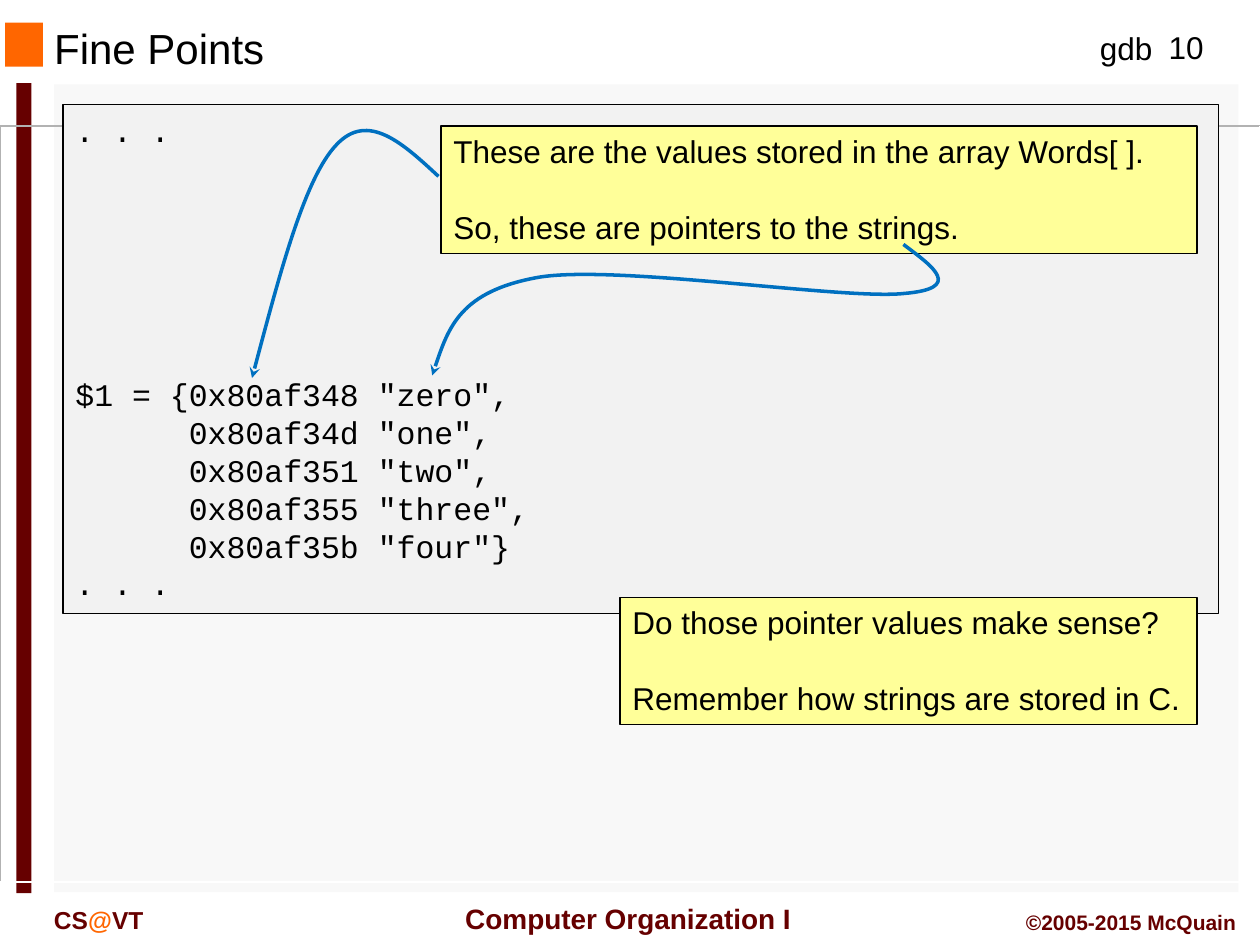
import pptx
import pptx.dml.color
import pptx.enum.text
import pptx.oxml
import pptx.oxml.ns
import pptx.util
from pptx.util import Inches, Pt

RGBColor = pptx.dml.color.RGBColor
ALIGN = pptx.enum.text.PP_ALIGN
ANCHOR = pptx.enum.text.MSO_ANCHOR
RECTANGLE = pptx.enum.shapes.MSO_SHAPE.RECTANGLE

BLACK = RGBColor(0x00, 0x00, 0x00)
WHITE = RGBColor(0xFF, 0xFF, 0xFF)
MAROON = RGBColor(0x66, 0x00, 0x00)
ORANGE = RGBColor(0xFF, 0x66, 0x00)
PANEL = RGBColor(0xF8, 0xF8, 0xF8)
EDGE = RGBColor(0xB2, 0xB2, 0xB2)
CODE_FILL = RGBColor(0xF2, 0xF2, 0xF2)
NOTE_FILL = RGBColor(0xFF, 0xFF, 0x99)
BLUE = RGBColor(0x00, 0x70, 0xC0)

SIZE = 18
LINE = 1.2 * SIZE
CHARACTER = 0.6 * SIZE

TITLE = "Fine Points"
DECOR = [
    ((0.43, 0.67, 9.4, 6.41), PANEL),
    ((0.04, 0.18, 0.3, 0.35), ORANGE),
    ((0.13, 0.66, 0.12, 6.43), MAROON),
]
EDGES = [
    ([(9.81, 0.67), (0.42, 0.67), (0.42, 7.08)], EDGE),
    ([(9.83, 0.67), (9.83, 7.08), (0.44, 7.08)], WHITE),
]
LABELS = [
    ((8.63, 0.18, 0.62, 0.4), [("gdb", BLACK)], 18, False, ALIGN.LEFT, False),
    ((3.5, 7.11, 2.91, 0.37), [(" Computer Organization I", MAROON)], 16, True, ALIGN.CENTER, False),
    ((9.08, 0.17, 0.67, 0.4), [("10", BLACK)], 18, False, ALIGN.CENTER, True),
    ((0.33, 7.13, 1.5, 0.33), [("CS", MAROON), ("@", ORANGE), ("VT", MAROON)], 14, True, ALIGN.LEFT, True),
    ((7.83, 7.17, 2.08, 0.3), [("©2005-2015 McQuain", MAROON)], 12, True, ALIGN.RIGHT, True),
]
# Each line: text, blank lines above, characters of indent
CODE = [
    (". . .", 0, 0),
    ('$1 = {0x80af348 "zero",', 6, 0),
    ('0x80af34d "one",', 0, 6),
    ('0x80af351 "two",', 0, 6),
    ('0x80af355 "three",', 0, 6),
    ('0x80af35b "four"}', 0, 6),
    (". . .", 0, 0),
]
VALUES_NOTE = [
    ("These are the values stored in the array Words[ ].", 0, 0),
    ("So, these are pointers to the strings.", 1, 0),
]
QUESTION_NOTE = [
    ("Do those pointer values make sense?", 0, 0),
    ("Remember how strings are stored in C.", 1, 0),
]
ARROW_TO_ADDRESS = [(3.48, 1.4), (3.2, 1.14), (2.92, 0.88), (2.67, 1.15),
                    (2.42, 1.41), (2.21, 2.21), (2, 3)]
ARROW_TO_STRING = [(7.17, 1.94), (7.41, 2.12), (7.65, 2.29), (7.17, 2.33), (6.69, 2.38),
                   (4.9, 2.1), (4.28, 2.2), (3.65, 2.31), (3.54, 2.65), (3.43, 2.98)]


def style(run, color, size=SIZE, font="Arial", bold=False):
    run.font.name, run.font.size, run.font.bold = font, Pt(size), bold
    run.font.color.rgb = color


def add_rectangle(slide, box, fill, outline=None):
    rectangle = slide.shapes.add_shape(RECTANGLE, *map(Inches, box))
    rectangle.shadow.inherit = False
    rectangle.fill.solid()
    rectangle.fill.fore_color.rgb = fill
    if outline is None:
        rectangle.line.fill.background()
    else:
        rectangle.line.color.rgb = outline
        rectangle.line.width = Pt(0.75)
    return rectangle


def add_panel(slide, box, fill, lines, font):
    frame = add_rectangle(slide, box, fill, BLACK).text_frame
    frame.word_wrap = True
    frame.vertical_anchor = ANCHOR.TOP
    frame.text = "\n".join(text for text, _, _ in lines)
    for paragraph, (_, blanks, indent) in zip(frame.paragraphs, lines):
        paragraph.alignment = ALIGN.LEFT
        paragraph.line_spacing = Pt(LINE)
        paragraph.space_before = Pt(blanks * LINE)
        paragraph._p.get_or_add_pPr().set("marL", str(Pt(indent * CHARACTER)))
        style(paragraph.runs[0], BLACK, font=font)


def add_label(slide, box, parts, size, bold, align, wrap):
    frame = slide.shapes.add_textbox(*map(Inches, box)).text_frame
    frame.word_wrap = wrap
    paragraph = frame.paragraphs[0]
    paragraph.alignment = align
    for text, color in parts:
        run = paragraph.add_run()
        run.text = text
        style(run, color, size, bold=bold)


def add_path(slide, points, color, width):
    builder = slide.shapes.build_freeform(*points[0], scale=Inches(1))
    builder.add_line_segments(points[1:], close=False)
    outline = builder.convert_to_shape()
    outline.shadow.inherit = False
    outline.fill.background()
    outline.line.color.rgb = color
    outline.line.width = Pt(width)
    return outline


def add_curved_arrow(slide, points):
    """Draw a cubic Bezier path ending in a stealth arrowhead."""
    scaled = [(round(x * 1000), round(y * 1000)) for x, y in points]
    builder = slide.shapes.build_freeform(*scaled[0], scale=Inches(1) / 1000)
    builder.add_line_segments(scaled[1:], close=False)
    arrow = builder.convert_to_shape()
    arrow.shadow.inherit = False
    arrow.fill.background()
    arrow.line.color.rgb = BLUE
    arrow.line.width = Pt(2)
    qn = pptx.oxml.ns.qn
    path = arrow._element.find(".//" + qn("a:path"))
    segments = path.findall(qn("a:lnTo"))
    for start in range(0, len(segments), 3):
        curve = path.makeelement(qn("a:cubicBezTo"), {})
        path.append(curve)
        for segment in segments[start:start + 3]:
            curve.append(segment[0])
            path.remove(segment)
    line = arrow.line._get_or_add_ln()
    line.append(line.makeelement(qn("a:tailEnd"), {"type": "stealth"}))


def add_title(slide):
    title = slide.shapes.title
    title.left, title.top, title.width, title.height = map(Inches, (0.33, 0.19, 6.33, 0.38))
    title.text_frame.text = TITLE
    title.text_frame.vertical_anchor = ANCHOR.MIDDLE
    title.text_frame.paragraphs[0].alignment = ALIGN.LEFT
    style(title.text_frame.paragraphs[0].runs[0], BLACK, 24)


def main():
    deck = pptx.Presentation()
    deck.slide_width, deck.slide_height = Inches(10), Inches(7.5)
    slide = deck.slides.add_slide(deck.slide_layouts[5])
    for box, fill in DECOR:
        add_rectangle(slide, box, fill)
    for points, color in EDGES:
        add_path(slide, [(round(x, 2), round(y, 2)) for x, y in points], color, 1)
    for label in LABELS:
        add_label(slide, *label)
    add_title(slide)
    add_panel(slide, (0.5, 0.83, 9.17, 4.04), CODE_FILL, CODE, "Courier New")
    add_panel(slide, (3.5, 1, 6, 1.01), NOTE_FILL, VALUES_NOTE, "Arial")
    for points in (ARROW_TO_ADDRESS, ARROW_TO_STRING):
        add_curved_arrow(slide, points)
    add_panel(slide, (4.92, 4.74, 4.58, 1.01), NOTE_FILL, QUESTION_NOTE, "Arial")
    deck.save("out.pptx")


if __name__ == "__main__":
    main()
